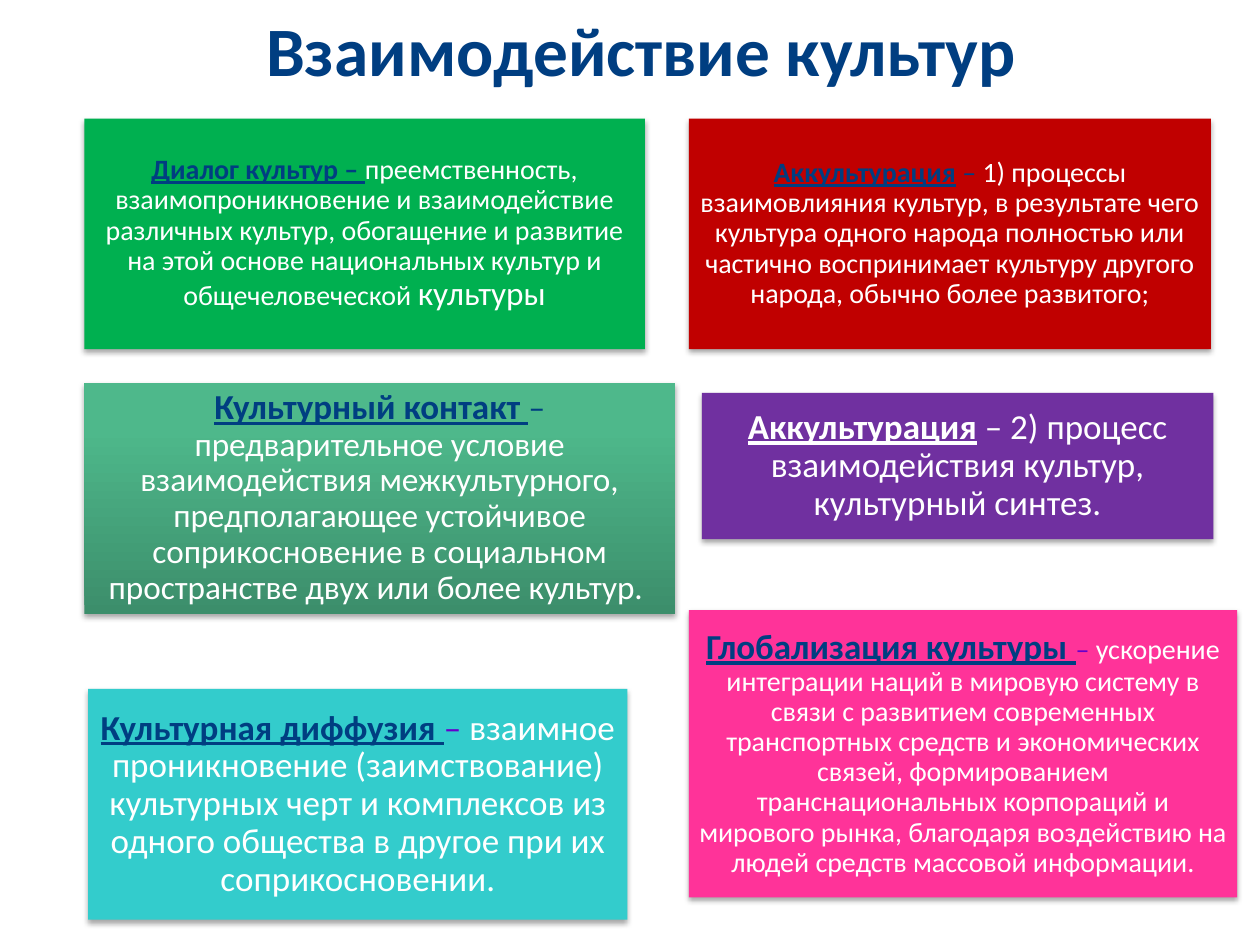
from copy import deepcopy
from dataclasses import dataclass

from lxml import etree
from pptx import Presentation
from pptx.dml.color import RGBColor
from pptx.enum.shapes import MSO_SHAPE
from pptx.enum.text import MSO_ANCHOR, PP_ALIGN
from pptx.oxml.ns import qn
from pptx.util import Cm, Pt

RECTANGLE = MSO_SHAPE.RECTANGLE
MIDDLE = MSO_ANCHOR.MIDDLE
CENTER = PP_ALIGN.CENTER
TITLE_ONLY = 5


@dataclass(frozen=True)
class Theme:
    font: str = "Calibri"
    navy: str = "003E81"
    violet: str = "6600CC"
    white: str = "FFFFFF"
    shadow: str = "000000"
    green: str = "00B050"
    red: str = "C00000"
    purple: str = "7030A0"
    turquoise: str = "33CCCC"
    pink: str = "FF3399"
    sea_gradient: tuple = ((0, "3C8E6B"), (0.8, "4EB88B"), (1, "4CBB8C"))
    title: float = 39.6
    large: float = 20
    medium: float = 19
    small: float = 16


THEME = Theme()

# Each card: left, top, width, height and inset in cm, fill,
# then the term and the pieces after it as (text, size, colour).
CARDS = [
    ((1.7, 2.39, 11.3, 4.65), 0.18, THEME.green, [
        ("Диалог культур – ", THEME.small, THEME.navy),
        ("преемственность, взаимопроникновение и взаимодействие различных "
         "культур, обогащение и развитие на этой основе национальных культур "
         "и общечеловеческой ", THEME.small, THEME.white),
        ("культуры", THEME.medium, THEME.white)]),
    ((13.89, 2.39, 10.52, 4.65), 0.18, THEME.red, [
        ("Аккультурация", THEME.small, THEME.navy),
        (" – ", THEME.small, THEME.navy),
        ("1) процессы взаимовлияния культур, в результате чего культура "
         "одного народа полностью или частично воспринимает культуру другого "
         "народа, обычно более развитого;", THEME.small, THEME.white)]),
    ((1.7, 7.72, 11.91, 4.65), 0.2, THEME.sea_gradient, [
        ("Культурный контакт ", THEME.large, THEME.navy),
        ("– ", THEME.medium, THEME.navy),
        ("предварительное условие взаимодействия межкультурного, "
         "предполагающее устойчивое соприкосновение в социальном "
         "пространстве двух или более культур. ", THEME.medium, THEME.white)]),
    ((14.15, 7.92, 10.31, 2.95), 0.2, THEME.purple, [
        ("Аккультурация", THEME.large, THEME.white),
        (" ", THEME.large, THEME.violet),
        ("– 2) процесс взаимодействия культур, культурный синтез.",
         THEME.large, THEME.white)]),
    ((1.78, 13.89, 10.87, 4.65), 0.2, THEME.turquoise, [
        ("Культурная диффузия ", THEME.large, THEME.navy),
        ("– ", THEME.large, THEME.violet),
        ("взаимное проникновение (заимствование) культурных черт и "
         "комплексов из одного общества в другое при их соприкосновении.",
         THEME.large, THEME.white)]),
    ((13.89, 12.3, 11.05, 5.79), 0.2, THEME.pink, [
        ("Глобализация культуры ", THEME.large, THEME.navy),
        ("– ", THEME.small, THEME.violet),
        ("ускорение интеграции наций в мировую систему в связи с развитием "
         "современных транспортных средств и экономических связей, "
         "формированием транснациональных корпораций и мирового рынка, "
         "благодаря воздействию на людей средств массовой информации.",
         THEME.small, THEME.white)]),
]


def place(shape, box):
    shape.left, shape.top, shape.width, shape.height = map(Cm, box)


def format_run(run, size, color, emphasis):
    run.font.name = THEME.font
    run.font.size = Pt(size)
    run.font.color.rgb = RGBColor.from_string(color)
    run.font.bold = emphasis


def add_title(slide, text):
    title = slide.shapes.title
    place(title, (1.5, 0, 22.86, 1.98))
    frame = title.text_frame
    frame.text = text
    frame.vertical_anchor = MIDDLE
    paragraph = frame.paragraphs[0]
    paragraph.alignment = CENTER
    format_run(paragraph.runs[0], THEME.title, THEME.navy, True)


def fill_gradient(shape, stops):
    """Fill from bottom to top with (position, colour) stops."""
    shape.fill.gradient()
    shape.fill.gradient_angle = 90
    stop_list = next(shape._element.spPr.iter(qn("a:gsLst")))
    while len(stop_list) < len(stops):
        stop_list.append(deepcopy(stop_list[-1]))
    for stop, (position, color) in zip(shape.fill.gradient_stops, stops):
        stop.position = position
        stop.color.rgb = RGBColor.from_string(color)


def add_shadow(shape):
    shape.shadow.inherit = False
    effects = shape._element.spPr.find(qn("a:effectLst"))
    outer = etree.SubElement(
        effects, qn("a:outerShdw"), blurRad=str(Pt(3.1)), dist=str(Pt(1.8)),
        dir="5400000", rotWithShape="0")
    color = etree.SubElement(outer, qn("a:srgbClr"), val=THEME.shadow)
    etree.SubElement(color, qn("a:alpha"), val="35000")


def add_card(slide, box, inset, fill, pieces):
    """Add a definition card whose first piece is the underlined term."""
    card = slide.shapes.add_shape(RECTANGLE, *map(Cm, box))
    if isinstance(fill, str):
        card.fill.solid()
        card.fill.fore_color.rgb = RGBColor.from_string(fill)
    else:
        fill_gradient(card, fill)
    card.line.fill.background()
    add_shadow(card)

    frame = card.text_frame
    frame.word_wrap = True
    frame.vertical_anchor = MIDDLE
    frame.margin_left = frame.margin_right = Cm(inset)
    frame.margin_top = frame.margin_bottom = Cm(inset)
    paragraph = frame.paragraphs[0]
    paragraph.alignment = CENTER
    paragraph.line_spacing = 0.9
    for index, (text, size, color) in enumerate(pieces):
        run = paragraph.add_run()
        run.text = text
        is_term = index == 0
        format_run(run, size, color, is_term)
        run.font.underline = is_term


def main():
    presentation = Presentation()
    presentation.slide_width = Cm(25.4)
    presentation.slide_height = Cm(19.05)
    slide = presentation.slides.add_slide(
        presentation.slide_layouts[TITLE_ONLY])
    add_title(slide, "Взаимодействие культур")
    for card in CARDS:
        add_card(slide, *card)
    presentation.save("out.pptx")


if __name__ == "__main__":
    main()
